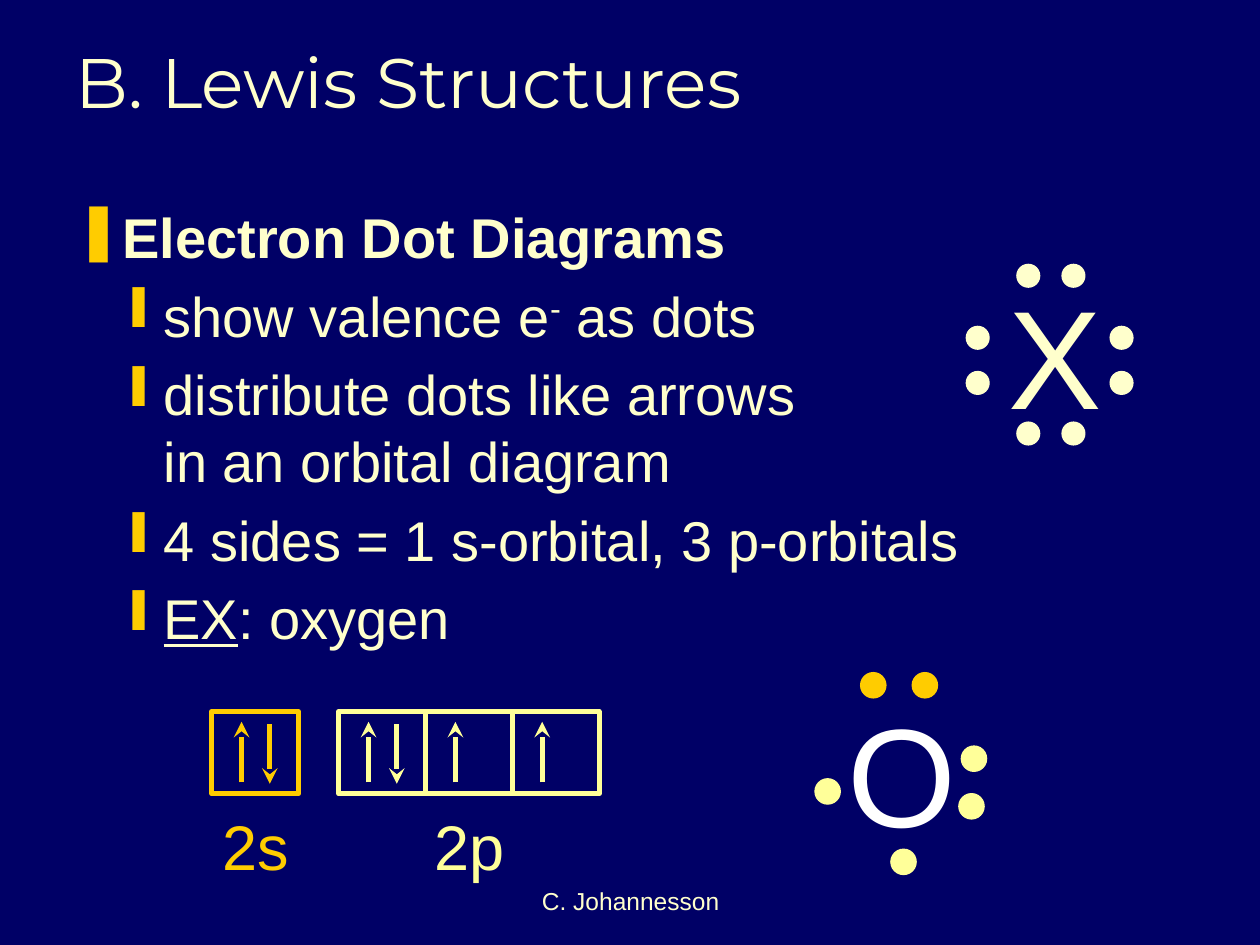
from dataclasses import dataclass

from lxml import etree
from pptx import Presentation
from pptx import util as u
from pptx.dml.color import RGBColor
from pptx.enum import shapes, text
from pptx.oxml import ns


@dataclass(frozen=True)
class Theme:
    background: str = "000066"
    cream: str = "FFFFCC"
    gold: str = "FFCC00"
    lemon: str = "FFFF99"
    white: str = "FFFFFF"
    body_font: str = "Arial"
    title_font: str = "Montserrat"
    footer_size: int = 14
    body_size: int = 32
    label_size: int = 36
    title_size: int = 40
    symbol_size: int = 80
    line_width: float = 3


THEME = Theme()
CELL_WIDTH, CELL_HEIGHT, CELL_TOP = 1.75, 1.65, 14.35


def color(value):
    return RGBColor.from_string(value)


def lengths(*values):
    return [u.Cm(value) for value in values]


def style_span(span, size, fill, font=THEME.body_font, bold=False):
    span.font.name = font
    span.font.size = u.Pt(size)
    span.font.color.rgb = color(fill)
    span.font.bold = bold


def add_label(parent, words, place, size, fill, font=THEME.body_font,
              align=text.PP_ALIGN.CENTER, anchor=text.MSO_ANCHOR.TOP,
              wrap=True, spacing=None):
    box = parent.add_textbox(*lengths(*place))
    frame = box.text_frame
    frame.text = words
    frame.word_wrap = wrap
    frame.vertical_anchor = anchor
    para = frame.paragraphs[0]
    para.alignment = align
    para.line_spacing = spacing
    style_span(para.runs[0], size, fill, font)


def add_bullet(para, level, symbol, margin, hanging):
    para.level = level
    properties = para._p.get_or_add_pPr()
    properties.set("marL", str(u.Cm(margin)))
    properties.set("indent", str(-u.Cm(hanging)))
    tint = etree.SubElement(properties, ns.qn("a:buClr"))
    etree.SubElement(tint, ns.qn("a:srgbClr"), val=THEME.gold)
    etree.SubElement(properties, ns.qn("a:buChar"), char=symbol)


def add_outline(page):
    box = page.shapes.add_textbox(*lengths(1.27, 3.96, 22.71, 8.08))
    frame = box.text_frame
    frame.word_wrap = True
    heading = frame.paragraphs[0]
    heading.text = "Electron Dot Diagrams"
    add_bullet(heading, 0, "❚", 0.79, 0.79)
    style_span(heading.runs[0], THEME.body_size, THEME.cream, bold=True)

    points = [
        ["show valence e", "-", " as dots"],
        ["distribute dots like arrows\vin an orbital diagram"],
        ["4 sides = 1 s-orbital, 3 p-orbitals"],
        ["EX", ": oxygen"],
    ]
    paras = []
    for first, *others in points:
        para = frame.add_paragraph()
        para.text = first
        for words in others:
            para.add_run().text = words
        add_bullet(para, 1, "❙", 1.78, 0.66)
        para.space_before = u.Pt(0.2 * THEME.body_size)
        for span in para.runs:
            style_span(span, THEME.body_size, THEME.cream)
        paras.append(para)
    paras[0].runs[1]._r.get_or_add_rPr().set("baseline", "30000")
    paras[3].runs[0].font.underline = True


def add_arrow(parent, x, start, end, fill):
    arrow = parent.add_connector(shapes.MSO_CONNECTOR.STRAIGHT,
                                 *lengths(x, start, x, end))
    arrow.line.color.rgb = color(fill)
    arrow.line.width = u.Pt(THEME.line_width)
    etree.SubElement(arrow.line._get_or_add_ln(), ns.qn("a:tailEnd"), type="stealth")
    etree.SubElement(arrow._element.spPr, ns.qn("a:effectLst"))


def add_orbital(parent, left, electrons, fill):
    cell = parent.add_shape(shapes.MSO_SHAPE.RECTANGLE,
                            *lengths(left, CELL_TOP, CELL_WIDTH, CELL_HEIGHT))
    cell.shadow.inherit = False
    cell.fill.background()
    cell.line.color.rgb = color(fill)
    cell.line.width = u.Pt(THEME.line_width)
    add_arrow(parent, left + 0.6, 15.77, 14.55, fill)
    if electrons == 2:
        add_arrow(parent, left + 1.17, 14.6, 15.8, fill)


def add_orbital_diagram(page):
    diagram = page.shapes.add_group_shape().shapes
    add_orbital(diagram, 4.27, 2, THEME.gold)
    for index, electrons in enumerate([2, 1, 1]):
        add_orbital(diagram, 6.83 + index * CELL_WIDTH, electrons, THEME.lemon)
    for words, left, width, fill in [("2s", 4.24, 1.85, THEME.gold),
                                     ("2p", 8.51, 1.93, THEME.lemon)]:
        add_label(diagram, words, (left, 15.7, width, 2.24), THEME.label_size,
                  fill, wrap=False, spacing=1.3)


def add_dots(parent, places, size, fill):
    for left, top in places:
        dot = parent.add_shape(shapes.MSO_SHAPE.OVAL,
                               *lengths(left, top, size, size))
        dot.shadow.inherit = False
        dot.fill.solid()
        dot.fill.fore_color.rgb = color(fill)
        dot.line.color.rgb = color(fill)
        dot.line.width = u.Pt(0.75)


def add_general_atom(page):
    atom = page.shapes.add_group_shape().shapes
    add_label(atom, "X", (19.18, 5.31, 4.17, 3.63), THEME.symbol_size, THEME.cream)
    above_below = [(x, y) for y in (5.33, 8.51) for x in (20.5, 21.41)]
    sides = [(x, y) for x in (19.48, 22.38) for y in (6.58, 7.49)]
    add_dots(atom, above_below + sides, 0.46, THEME.cream)


def add_oxygen_atom(page):
    add_label(page.shapes, "O", (16.84, 14.25, 2.64, 2.62), THEME.symbol_size,
              THEME.white, anchor=text.MSO_ANCHOR.MIDDLE, wrap=False)
    s_electrons = [(17.35, 13.56), (18.39, 13.56)]
    p_electrons = [(16.43, 15.7), (19.33, 16), (17.96, 17.12), (19.38, 15.04)]
    add_dots(page.shapes, s_electrons, 0.51, THEME.gold)
    add_dots(page.shapes, p_electrons, 0.51, THEME.lemon)


def main():
    deck = Presentation()
    deck.slide_width, deck.slide_height = lengths(25.4, 19.05)
    page = deck.slides.add_slide(deck.slide_layouts[6])
    page.background.fill.solid()
    page.background.fill.fore_color.rgb = color(THEME.background)
    add_label(page.shapes, "C. Johannesson", (8.69, 17.3, 8.05, 1.27),
              THEME.footer_size, THEME.cream, anchor=text.MSO_ANCHOR.BOTTOM)
    add_label(page.shapes, "B. Lewis Structures", (1.27, 0.41, 21.44, 2.18),
              THEME.title_size, THEME.cream, THEME.title_font,
              text.PP_ALIGN.LEFT, text.MSO_ANCHOR.BOTTOM)
    add_outline(page)
    add_orbital_diagram(page)
    add_oxygen_atom(page)
    add_general_atom(page)
    deck.save("out.pptx")


if __name__ == "__main__":
    main()
